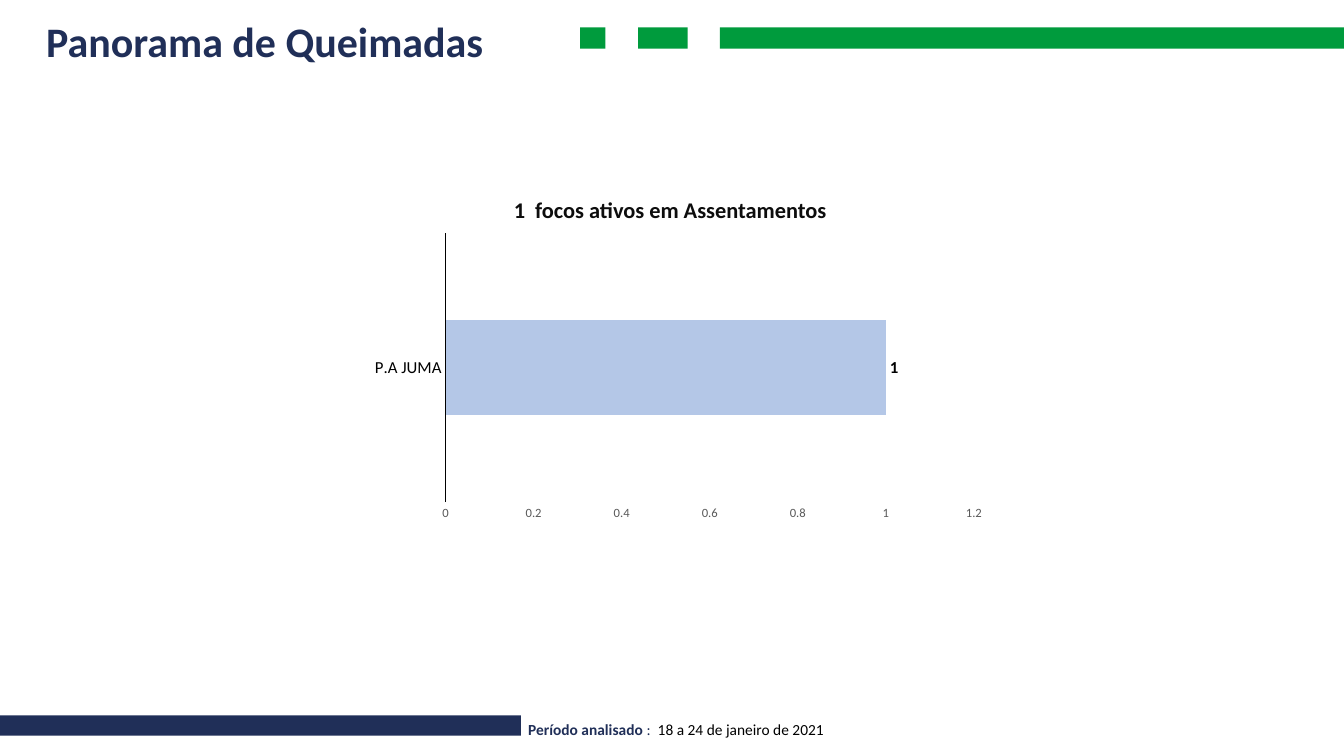
from lxml import etree
from pptx import Presentation
from pptx.chart.data import CategoryChartData
from pptx.dml.color import RGBColor
from pptx.enum.chart import XL_CHART_TYPE, XL_LABEL_POSITION, XL_TICK_MARK
from pptx.enum.shapes import MSO_SHAPE
from pptx.enum.text import MSO_ANCHOR, PP_ALIGN
from pptx.oxml import parse_xml
from pptx.oxml.ns import nsdecls, qn
from pptx.util import Cm, Pt

RECT = MSO_SHAPE.RECTANGLE
BAR = XL_CHART_TYPE.BAR_CLUSTERED
OUTSIDE_END = XL_LABEL_POSITION.OUTSIDE_END
NO_TICK = XL_TICK_MARK.NONE
LEFT, CENTER = PP_ALIGN.LEFT, PP_ALIGN.CENTER
TOP, MIDDLE = MSO_ANCHOR.TOP, MSO_ANCHOR.MIDDLE

FONT = "Calibri"
COLORS = {"green": "009B3D", "navy": "202F58", "ink": "0D0D0D",
          "black": "000000", "gray": "595959", "bar": "B4C7E7"}


def style(font, size, color, bold=False):
    font.name = FONT
    font.size = Pt(size)
    font.bold = bold
    font.color.rgb = RGBColor.from_string(COLORS[color])


def place(sp, box, align, anchor, wrap):
    """Position a text shape and return its text frame."""
    sp.left, sp.top, sp.width, sp.height = (Cm(v) for v in box)
    tf = sp.text_frame
    tf.word_wrap = wrap
    tf.vertical_anchor = anchor
    tf.paragraphs[0].alignment = align
    return tf


prs = Presentation()
prs.slide_width, prs.slide_height = Cm(33.87), Cm(19.05)
s = prs.slides.add_slide(prs.slide_layouts[5])

# Header and footer bars
for left, top, width, height, color in [
    (18.14, 0.69, 15.73, 0.54, "green"),
    (16.08, 0.69, 1.25, 0.54, "green"),
    (14.62, 0.69, 0.64, 0.54, "green"),
    (0, 18.03, 13.13, 0.51, "navy"),
]:
    sp = s.shapes.add_shape(RECT, Cm(left), Cm(top), Cm(width), Cm(height))
    sp.shadow.inherit = False
    sp.fill.solid()
    sp.fill.fore_color.rgb = RGBColor.from_string(COLORS[color])
    sp.line.fill.background()

# Title
s.shapes.title.text_frame.text = "Panorama de Queimadas"
tf = place(s.shapes.title, (0.91, 0.25, 12.57, 1.55), LEFT, MIDDLE, False)
style(tf.paragraphs[0].runs[0].font, 30, "navy", True)

# Chart heading
sp = s.shapes.add_textbox(0, 0, 0, 0)
sp.text_frame.text = "1  focos ativos em Assentamentos"
tf = place(sp, (12.65, 4.83, 8.48, 0.94), CENTER, TOP, False)
style(tf.paragraphs[0].runs[0].font, 16, "ink", True)

# Period analysed
sp = s.shapes.add_textbox(0, 0, 0, 0)
tf = place(sp, (13.06, 18.01, 13.79, 0.74), LEFT, TOP, True)
for text, color, bold in [
    ("Período analisado ", "navy", True),
    (": ", "navy", False),
    (" 18 a 24 de janeiro de 2021", "black", False),
]:
    r = tf.paragraphs[0].add_run()
    r.text = text
    style(r.font, 11, color, bold)

# Chart of active fires
data = CategoryChartData()
data.categories = ["P.A JUMA"]
data.add_series("Series 1", [1])
chart = s.shapes.add_chart(BAR, Cm(9.17), Cm(5.72), Cm(15.85), Cm(7.62), data).chart
chart.has_legend = False
chart.has_title = False
style(chart.font, 10, "black")

plot = chart.plots[0]
plot.gap_width = 182
plot.vary_by_categories = False
series = plot.series[0]
series.format.fill.solid()
series.format.fill.fore_color.rgb = RGBColor.from_string(COLORS["bar"])
labels = series.data_labels
labels.show_value = True
labels.position = OUTSIDE_END
style(labels.font, 12, "black", True)

for axis, size, color in [(chart.category_axis, 12, "black"),
                          (chart.value_axis, 9, "gray")]:
    axis.has_major_gridlines = False
    axis.major_tick_mark = axis.minor_tick_mark = NO_TICK
    style(axis.tick_labels.font, size, color)
line = chart.category_axis.format.line
line.width = Pt(0.75)
line.color.rgb = RGBColor.from_string(COLORS["black"])
axis = chart.value_axis
axis.format.line.fill.background()
axis.minimum_scale, axis.maximum_scale, axis.major_unit = 0, 1.2, 0.2
axis.tick_labels.number_format = "General"
axis.tick_labels.number_format_is_linked = False

# Fixed inner plot area, as fractions of the chart
plot_area = plot._element.getparent()
for old in plot_area.findall(qn("c:layout")):
    plot_area.remove(old)
layout = parse_xml(f"<c:layout {nsdecls('c')}><c:manualLayout/></c:layout>")
for tag, val in [("layoutTarget", "inner"), ("xMode", "edge"), ("yMode", "edge"),
                 ("x", 0.13), ("y", 0.02), ("w", 0.84), ("h", 0.89)]:
    etree.SubElement(layout[0], qn(f"c:{tag}")).set("val", str(val))
plot_area.insert(0, layout)

prs.save("out.pptx")
